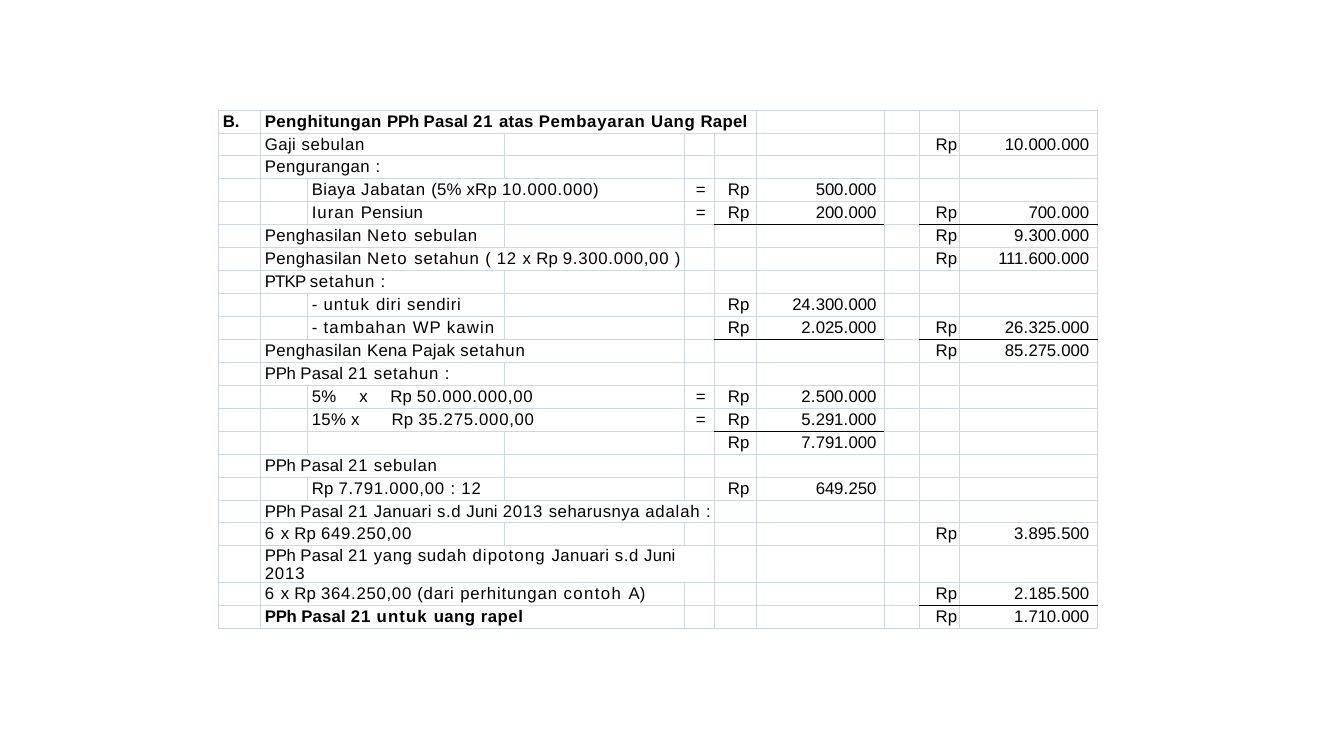
from dataclasses import dataclass, field
from itertools import groupby
from typing import NamedTuple

from lxml.etree import SubElement as Sub
from pptx import Presentation
from pptx.dml.color import RGBColor as Rgb
from pptx.enum.text import PP_ALIGN as Al
from pptx.oxml.ns import qn
from pptx.util import Pt

GAPS = {
    -0.6: "PTKP",
    -0.2: "PPh",
    -0.1: "B.",
    0: "=",
    0.1: "Pasal (5% 5% Rp Juni Kena",
    0.2: "atas Rapel xRp Pensiun Pajak x 15% A)",
    0.3: "Penghitungan Gaji Pengurangan Biaya Penghasilan Januari seharusnya uang",
    0.4: "Uang ( ) s.d yang rapel",
    0.6: "21 : setahun 12 diri WP 2013 adalah perhitungan",
    0.7: "Iuran 6",
    0.8: "untuk tambahan kawin dipotong",
    1: "Neto contoh",
}
WORDS = {word: gap for gap, words in GAPS.items() for word in words.split()}


@dataclass
class Theme:
    """Colours, type and cell measures."""
    ink: str = "000000"
    grid: str = "D0D6E4"
    font: str = "Arial"
    size: float = 12
    side: float = 1
    rule: float = 0.75
    top: float = 1.3
    inset: float = 3
    loose: float = 0.5
    tight: float = 0.93
    pads: dict = field(default_factory=lambda: {5: 5, 6: 5.8, 8: 1.5, 9: 5.8})


class Row(NamedTuple):
    """One line of the tax sum."""
    label: str = ""
    col: int = 1
    span: int = 2
    equal: bool = False
    left: str = ""
    right: str = ""
    line: bool = False
    bold: bool = False
    tabs: tuple = ()
    dense: bool = False


ROWS = [
    Row("Penghitungan PPh Pasal 21 atas Pembayaran Uang Rapel", span=5, bold=True),
    Row("Gaji sebulan", right="10.000.000"),
    Row("Pengurangan :"),
    Row("Biaya Jabatan (5% xRp 10.000.000)", 2, equal=True, left="500.000"),
    Row("Iuran Pensiun", 2, 1, True, "200.000", "700.000", True),
    Row("Penghasilan Neto sebulan", right="9.300.000"),
    Row("Penghasilan Neto setahun ( 12 x Rp 9.300.000,00 )", span=3, right="111.600.000"),
    Row("PTKP setahun :"),
    Row("- untuk diri sendiri", 2, 1, left="24.300.000"),
    Row("- tambahan WP kawin", 2, 1, False, "2.025.000", "26.325.000", True),
    Row("Penghasilan Kena Pajak setahun", span=3, right="85.275.000"),
    Row("PPh Pasal 21 setahun :"),
    Row("5%\tx\tRp 50.000.000,00", 2, equal=True, left="2.500.000", tabs=(34, 56)),
    Row("15% x\tRp 35.275.000,00", 2, equal=True, left="5.291.000", line=True, tabs=(57,)),
    Row(span=1, left="7.791.000"),
    Row("PPh Pasal 21 sebulan"),
    Row("Rp 7.791.000,00 : 12", 2, 1, left="649.250"),
    Row("PPh Pasal 21 Januari s.d Juni 2013 seharusnya adalah :", span=4),
    Row("6 x Rp 649.250,00", right="3.895.500"),
    Row("PPh Pasal 21 yang sudah dipotong Januari s.d Juni 2013", span=4, dense=True),
    Row("6 x Rp 364.250,00 (dari perhitungan contoh A)", span=3, right="2.185.500", line=True),
    Row("PPh Pasal 21 untuk uang rapel", span=3, right="1.710.000", bold=True),
]
COLS = [30, 33.6, 140.7, 128.6, 21.4, 30, 91.4, 25, 28.4, 98.6]


class Deck:
    """Draws styled elements on the current slide."""

    def __init__(self, theme):
        self.look = theme
        self.file = Presentation()
        self.file.slide_width, self.file.slide_height = Pt(960), Pt(540)
        self.slide = self.file.slides.add_slide(self.file.slide_layouts[6])

    def table(self, left, top, cols, count, high):
        """Add a plain grid."""
        frame = self.slide.shapes.add_table(
            count, len(cols), Pt(left), Pt(top), Pt(sum(cols)), Pt(high * count))
        grid = frame.table
        grid.first_row = grid.horz_banding = False
        for col, width in zip(grid.columns, cols):
            col.width = Pt(width)
        for row in grid.rows:
            row.height = Pt(high)
        return grid

    def frame(self, cell, above, below):
        """Set borders, margins and the empty text size of a cell."""
        look = self.look
        edges = [("L", look.grid, look.side), ("R", look.grid, look.side),
                 ("T", above, look.rule), ("B", below, look.rule)]
        prop = cell._tc.get_or_add_tcPr()
        for edge, tint, width in edges:
            line = Sub(prop, qn("a:ln" + edge), w=str(Pt(width)))
            Sub(Sub(line, qn("a:solidFill")), qn("a:srgbClr"), val=tint)
        cell.fill.background()
        cell.margin_left = cell.margin_right = cell.margin_bottom = 0
        cell.margin_top = Pt(look.top)
        para = cell.text_frame.paragraphs[0]
        Sub(para._p, qn("a:endParaRPr"), sz=str(int(look.size * 100)))

    def spaced(self, cell, bits, align=Al.LEFT, bold=False, indent=0, tabs=()):
        """Fill a cell with pieces of text, each with its letter spacing."""
        para = cell.text_frame.paragraphs[0]
        prop = para._p.get_or_add_pPr()
        prop.set("marL", str(Pt(indent)))
        if tabs:
            stops = Sub(prop, qn("a:tabLst"))
            for stop in tabs:
                Sub(stops, qn("a:tab"), pos=str(Pt(stop)), algn="l")
        para.alignment = align
        font = para.font
        font.name, font.size, font.bold = self.look.font, Pt(self.look.size), bold
        font.color.rgb = Rgb.from_string(self.look.ink)
        for gap, group in groupby(bits, lambda bit: bit[1]):
            run = para.add_run()
            run.text = "".join(bit[0] for bit in group)
            run._r.get_or_add_rPr().set("spc", str(round(gap * 100)))
        return para

    def label(self, cell, text, **style):
        """Fill a cell with words spaced by the word list."""
        parts = text.replace(" ", " |").replace("\t", "\t|").split("|")
        bits = [(part, WORDS.get(part.strip(), self.look.loose)) for part in parts]
        return self.spaced(cell, bits, **style)

    def amount(self, grid, row, col, text):
        """Add a currency mark and a right-aligned sum."""
        mark, cell = grid.cell(row, col), grid.cell(row, col + 1)
        mark.margin_right, cell.margin_right = Pt(self.look.pads[col]), Pt(self.look.pads[col + 1])
        self.label(mark, "Rp", align=Al.RIGHT)
        self.spaced(cell, [(sign, 0.3 if sign == "." else -0.1) for sign in text], Al.RIGHT)

    def ruled(self, row, col):
        """Tell whether a sum line runs below a cell."""
        if row < 0 or not ROWS[row].line:
            return False
        return bool(col in (5, 6) and ROWS[row].left or col in (8, 9) and ROWS[row].right)

    def ledger(self):
        """Draw the whole tax sum."""
        look = self.look
        grid = self.table(156.2, 78.6, COLS, len(ROWS), 16.4)
        for num, row in enumerate(ROWS):
            for col in range(len(COLS)):
                above, below = [look.ink if self.ruled(at, col) else look.grid
                                for at in (num - 1, num)]
                self.frame(grid.cell(num, col), above, below)
            cell = grid.cell(num, row.col)
            if row.span > 1:
                cell.merge(grid.cell(num, row.col + row.span - 1))
            if row.label:
                para = self.label(cell, row.label, bold=row.bold, indent=look.inset, tabs=row.tabs)
                if row.dense:
                    para.line_spacing = look.tight
            if row.equal:
                self.label(grid.cell(num, 4), "=", align=Al.CENTER, indent=1.5)
            for col, text in ((5, row.left), (8, row.right)):
                if text:
                    self.amount(grid, num, col, text)
        self.label(grid.cell(0, 0), "B.", bold=True, indent=look.inset)


def main():
    deck = Deck(Theme())
    deck.ledger()
    deck.file.save("out.pptx")


if __name__ == "__main__":
    main()
